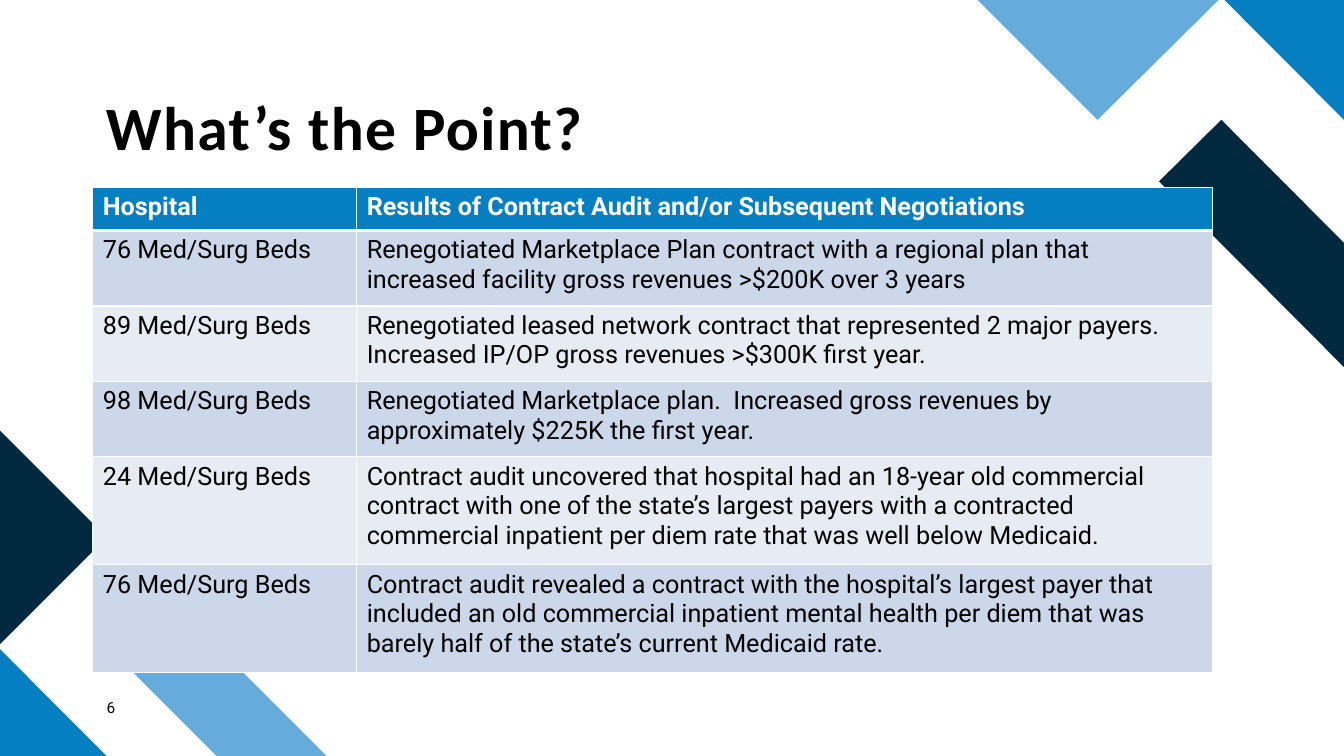
from lxml import etree
from pptx import Presentation, util as u
from pptx.dml.color import RGBColor
from pptx.enum import text
from pptx.oxml import parse_xml
from pptx.oxml.ns import nsdecls

COLORS = {
    "sky": "65ACDD", "blue": "067EC2", "navy": "002940",
    "band": "CCD8E9", "pale": "E7ECF4", "white": "FFFFFF", "black": "000000",
}

deck = Presentation()
deck.slide_width, deck.slide_height = u.Cm(33.87), u.Cm(19.05)
slide = deck.slides.add_slide(deck.slide_layouts[6])


def write(frame, words, size, font="Roboto", color="black", bold=False):
    frame.word_wrap = True
    run = frame.paragraphs[0].add_run()
    run.text = words
    run.font.size, run.font.name, run.font.bold = u.Pt(size), font, bold
    run.font.color.rgb = RGBColor.from_string(COLORS[color])
    return run


def add_label(left, top, width, height, words, **look):
    label = slide.shapes.add_textbox(u.Cm(left), u.Cm(top), u.Cm(width), u.Cm(height))
    frame = label.text_frame
    frame.margin_left = frame.margin_right = frame.margin_top = frame.margin_bottom = 0
    return frame, write(frame, words, **look)


corner_pieces = [
    ("sky", [(8.23, 19.05), (5.46, 19.05), (2.69, 16.28), (4.09, 14.91)]),
    ("blue", [(2.69, 19.05), (0, 19.05), (0, 16.36)]),
    ("navy", [(0, 10.85), (2.69, 13.54), (0, 16.23)]),
    ("navy", [(33.87, 9.25), (33.87, 6.12), (30.78, 3.02), (29.21, 4.57)]),
    ("blue", [(33.87, 3.02), (33.87, 0), (30.86, 0)]),
    ("sky", [(24.64, 0), (27.66, 3.02), (30.71, 0)]),
]
for color, corners in corner_pieces:
    start, *others = [(u.Cm(x), u.Cm(y)) for x, y in corners]
    outline = slide.shapes.build_freeform(*start)
    outline.add_line_segments(others, close=True)
    piece = outline.convert_to_shape()
    piece.shadow.inherit = False
    piece.fill.solid()
    piece.fill.fore_color.rgb = RGBColor.from_string(COLORS[color])
    piece.line.fill.background()

title_frame, title_run = add_label(2.67, 2.44, 28.22, 1.7, "What’s the Point?",
                                   size=44, font="Calibri", bold=True)
title_frame.vertical_anchor = text.MSO_ANCHOR.BOTTOM
title_frame.paragraphs[0].line_spacing = 0.9
title_style = title_run.font.fill._xPr
title_style.set("spc", "100")
title_style.find("{*}solidFill").addnext(parse_xml(
    f'<a:effectLst {nsdecls("a")}><a:outerShdw blurRad="50800" dist="38100" dir="8100000">'
    f'<a:srgbClr val="{COLORS["black"]}"><a:alpha val="40000"/></a:srgbClr>'
    '</a:outerShdw></a:effectLst>'))

add_label(2.69, 17.58, 1.45, 0.69, "6", size=11)

results = [
    ("Hospital", "Results of Contract Audit and/or Subsequent Negotiations"),
    ("76 Med/Surg Beds",
     "Renegotiated Marketplace Plan contract with a regional plan that increased "
     "facility gross revenues >$200K over 3 years"),
    ("89 Med/Surg Beds",
     "Renegotiated leased network contract that represented 2 major payers.  "
     "Increased IP/OP gross revenues >$300K first year."),
    ("98 Med/Surg Beds",
     "Renegotiated Marketplace plan.  Increased gross revenues by approximately "
     "$225K the first year."),
    ("24 Med/Surg Beds",
     "Contract audit uncovered that hospital had an 18-year old commercial contract "
     "with one of the state’s largest payers with a contracted commercial inpatient "
     "per diem rate that was well below Medicaid."),
    ("76 Med/Surg Beds",
     "Contract audit revealed a contract with the hospital’s largest payer that "
     "included an old commercial inpatient mental health per diem that was barely "
     "half of the state’s current Medicaid rate."),
]
row_heights = [1.09, 1.9, 1.9, 1.9, 2.72, 2.72]
column_widths = [6.65, 21.56]
audit = slide.shapes.add_table(
    len(results), 2, u.Cm(2.34), u.Cm(4.72),
    u.Cm(sum(column_widths)), u.Cm(sum(row_heights))).table
for column, width in zip(audit.columns, column_widths):
    column.width = u.Cm(width)

for r, (entries, height) in enumerate(zip(results, row_heights)):
    audit.rows[r].height = u.Cm(height)
    header = r == 0
    fill = "blue" if header else ("band" if r % 2 else "pale")
    weights = {"L": 1, "R": 1, "T": 3 if r == 1 else 1, "B": 3 if header else 1}
    for c, words in enumerate(entries):
        cell = audit.cell(r, c)
        write(cell.text_frame, words, size=18,
              color="white" if header else "black", bold=header)
        cell.fill.solid()
        cell.fill.fore_color.rgb = RGBColor.from_string(COLORS[fill])
        borders = cell._tc.get_or_add_tcPr()
        for place, (side, weight) in enumerate(weights.items()):
            edge = parse_xml(f'<a:ln{side} {nsdecls("a")} w="{u.Pt(weight)}"/>')
            paint = etree.SubElement(edge, edge.tag.replace(f"ln{side}", "solidFill"))
            etree.SubElement(paint, paint.tag.replace("solidFill", "srgbClr"),
                             val=COLORS["white"])
            borders.insert(place, edge)

deck.save("out.pptx")
